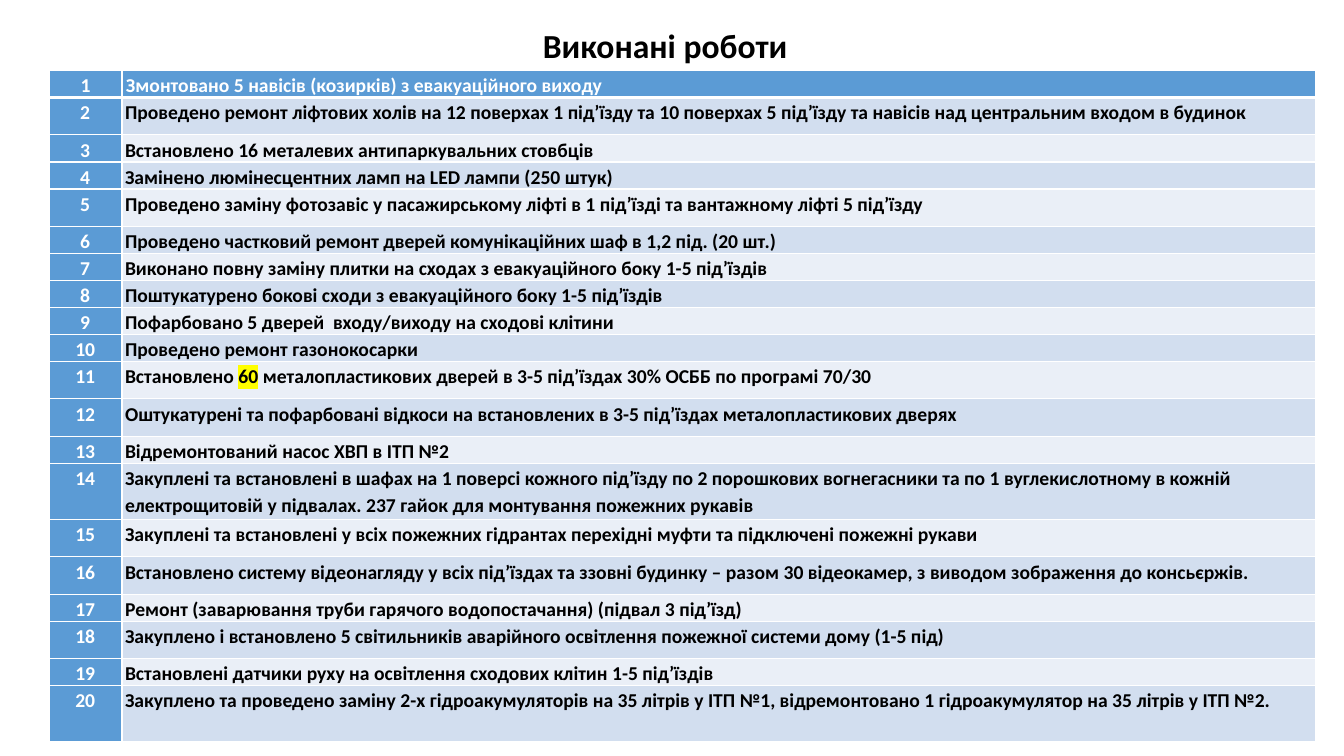
from lxml.etree import SubElement
from pptx import Presentation
from pptx.dml.color import RGBColor
from pptx.enum.text import MSO_ANCHOR, MSO_AUTO_SIZE, PP_ALIGN
from pptx.oxml.ns import qn
from pptx.util import Inches, Pt

FONT = "Calibri"
BLUE, WHITE, BLACK, YELLOW = "5B9BD5", "FFFFFF", "000000", "FFFF00"
BANDS = ("EAEFF7", "D2DEEF")
HEADER, SINGLE, MEDIUM, DOUBLE = 0.24, 0.26, 0.37, 0.56
COLUMN_WIDTHS = (0.72, 11.84)
HIGHLIGHTED = "60"
WORKS = [
    (HEADER, ["Змонтовано 5 навісів (козирків) з евакуаційного виходу"]),
    (MEDIUM, ["Проведено ремонт ліфтових холів на 12 поверхах 1 під’їзду та 10 поверхах 5 під’їзду "
              "та навісів над центральним входом в будинок"]),
    (SINGLE, ["Встановлено 16 металевих антипаркувальних стовбців"]),
    (SINGLE, ["Замінено люмінесцентних ламп на LED лампи (250 штук)"]),
    (MEDIUM, ["Проведено заміну фотозавіс у пасажирському ліфті в 1 під’їзді та вантажному ліфті 5 під’їзду"]),
    (SINGLE, ["Проведено частковий ремонт дверей комунікаційних шаф в 1,2 під. (20 шт.)"]),
    (SINGLE, ["Виконано повну заміну плитки на сходах з евакуаційного боку 1-5 під’їздів"]),
    (SINGLE, ["Поштукатурено бокові сходи з евакуаційного боку 1-5 під’їздів"]),
    (SINGLE, ["Пофарбовано 5 дверей  входу/виходу на сходові клітини"]),
    (SINGLE, ["Проведено ремонт газонокосарки"]),
    (MEDIUM, ["Встановлено ", HIGHLIGHTED,
              " металопластикових дверей в 3-5 під’їздах 30% ОСББ по програмі 70/30"]),
    (MEDIUM, ["Оштукатурені та пофарбовані відкоси на встановлених в 3-5 під’їздах металопластикових дверях"]),
    (SINGLE, ["Відремонтований насос ХВП в ІТП №2"]),
    (DOUBLE, ["Закуплені та встановлені в шафах на 1 поверсі кожного під’їзду по 2 порошкових вогнегасники "
              "та по 1 вуглекислотному в кожній електрощитовій у підвалах. "
              "237 гайок для монтування пожежних рукавів"]),
    (MEDIUM, ["Закуплені та встановлені у всіх пожежних гідрантах перехідні муфти та підключені пожежні рукави"]),
    (MEDIUM, ["Встановлено систему відеонагляду у всіх під’їздах та ззовні будинку – разом 30 відеокамер, "
              "з виводом зображення до консьєржів."]),
    (SINGLE, ["Ремонт (заварювання труби гарячого водопостачання) (підвал 3 під’їзд)"]),
    (MEDIUM, ["Закуплено і встановлено 5 світильників аварійного освітлення пожежної системи дому (1-5 під)"]),
    (SINGLE, ["Встановлені датчики руху на освітлення сходових клітин 1-5 під’їздів"]),
    (DOUBLE, ["Закуплено та проведено заміну 2-х гідроакумуляторів на 35 літрів у ІТП №1, "
              "відремонтовано 1 гідроакумулятор на 35 літрів у ІТП №2."]),
]


def color(value):
    """Turn a hex string into a colour."""
    return RGBColor.from_string(value)


def format_run(run, size, value):
    """Apply the bold slide font to a run."""
    run.font.name = FONT
    run.font.size = Pt(size)
    run.font.bold = True
    run.font.color.rgb = color(value)


def highlight_run(run, value):
    """Put a marker colour behind a run."""
    properties = run.font._element
    highlight = SubElement(properties, qn("a:highlight"))
    SubElement(highlight, qn("a:srgbClr"), val=value)
    properties.find(qn("a:solidFill")).addnext(highlight)


def set_borders(cell, top, bottom):
    """Draw white borders, with the top and bottom widths given in points."""
    properties = cell._tc.get_or_add_tcPr()
    for index, (side, width) in enumerate((("L", 1), ("R", 1), ("T", top), ("B", bottom))):
        line = SubElement(properties, qn(f"a:ln{side}"), w=str(Pt(width)))
        fill = SubElement(line, qn("a:solidFill"))
        SubElement(fill, qn("a:srgbClr"), val=WHITE)
        properties.insert(index, line)


def fill_cell(cell, parts, fill, text_color, alignment, row_index):
    """Write and format one table cell."""
    cell.fill.solid()
    cell.fill.fore_color.rgb = color(fill)
    cell.margin_left = Inches(0.03 if row_index else 0.04)
    cell.margin_right = Inches(0.04)
    cell.margin_top = cell.margin_bottom = 0
    cell.vertical_anchor = MSO_ANCHOR.TOP
    set_borders(cell, 3 if row_index == 1 else 1, 1 if row_index else 3)
    paragraph = cell.text_frame.paragraphs[0]
    paragraph.alignment = alignment
    paragraph.line_spacing = 1.15
    for part in parts:
        run = paragraph.add_run()
        run.text = part
        format_run(run, 14, text_color)
        if part == HIGHLIGHTED:
            highlight_run(run, YELLOW)


def add_title(slide, left, top, width, height):
    """Place the slide title in the given box."""
    title = slide.shapes.title
    title.left, title.top, title.width, title.height = map(Inches, (left, top, width, height))
    frame = title.text_frame
    frame.text = "Виконані роботи "
    frame.word_wrap = True
    frame.auto_size = MSO_AUTO_SIZE.SHAPE_TO_FIT_TEXT
    frame.vertical_anchor = MSO_ANCHOR.TOP
    paragraph = frame.paragraphs[0]
    paragraph.alignment = PP_ALIGN.CENTER
    format_run(paragraph.runs[0], 24, BLACK)


def add_works_table(slide, left, top, width, height):
    """Place the numbered table of completed works in the given box."""
    box = map(Inches, (left, top, width, height))
    table = slide.shapes.add_table(len(WORKS), len(COLUMN_WIDTHS), *box).table
    for column, column_width in zip(table.columns, COLUMN_WIDTHS):
        column.width = Inches(column_width)
    for index, (row_height, parts) in enumerate(WORKS):
        table.rows[index].height = Inches(row_height)
        fill, text_color = (BANDS[index % 2], BLACK) if index else (BLUE, WHITE)
        fill_cell(table.cell(index, 0), [str(index + 1)], BLUE, WHITE, PP_ALIGN.CENTER, index)
        fill_cell(table.cell(index, 1), parts, fill, text_color, PP_ALIGN.LEFT, index)


def main():
    """Build and save the slide."""
    presentation = Presentation()
    presentation.slide_width = Inches(13.33)
    presentation.slide_height = Inches(7.5)
    slide = presentation.slides.add_slide(presentation.slide_layouts.get_by_name("Title Only"))
    add_title(slide, 3.69, 0.2, 5.89, 0.5)
    add_works_table(slide, 0.49, 0.7, sum(COLUMN_WIDTHS), sum(row_height for row_height, _ in WORKS))
    presentation.save("out.pptx")


if __name__ == "__main__":
    main()
